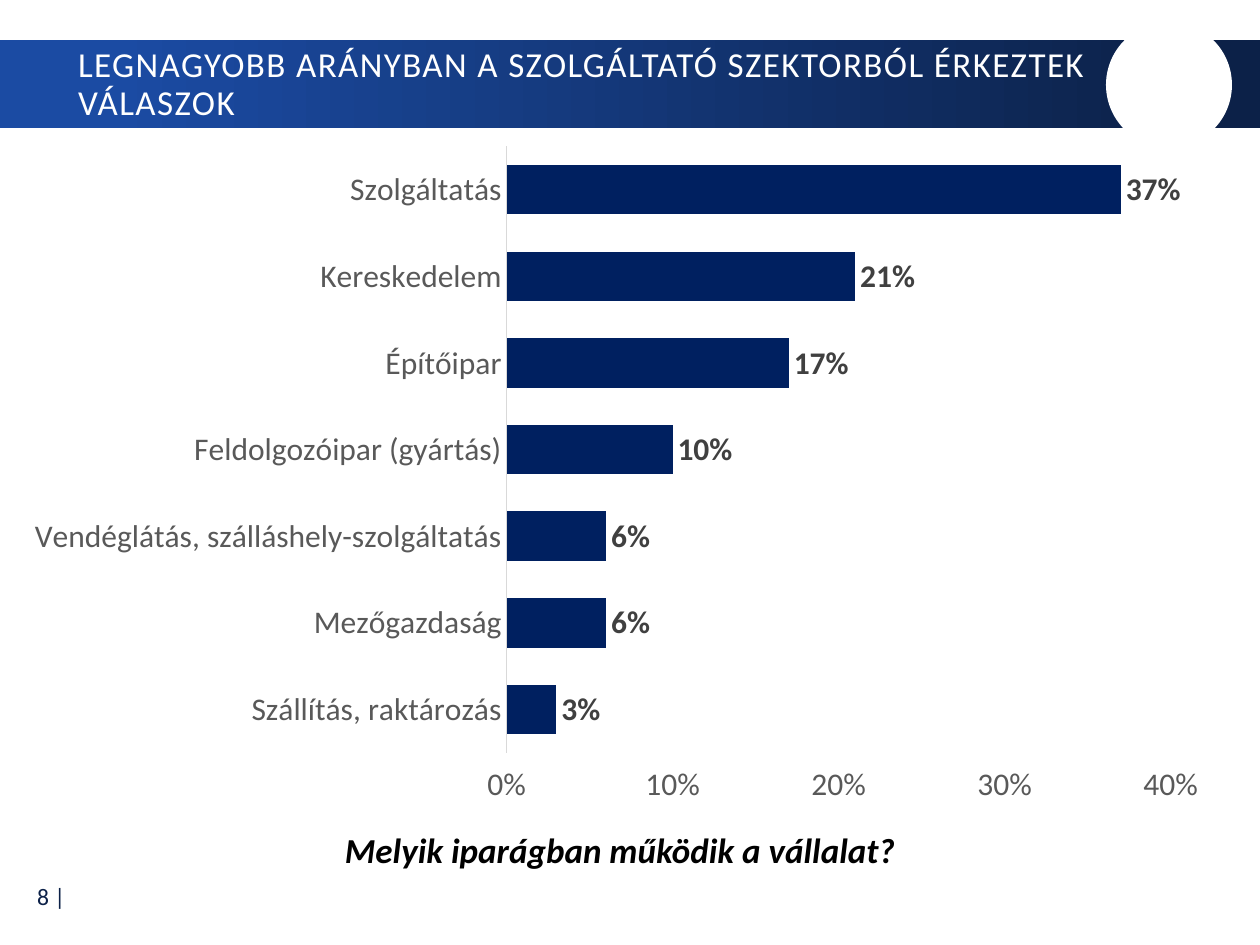
from dataclasses import dataclass

from lxml import etree
from pptx import Presentation
from pptx.chart.data import CategoryChartData
from pptx.dml.color import RGBColor
from pptx.enum.chart import (XL_CHART_TYPE, XL_LABEL_POSITION,
                             XL_TICK_LABEL_POSITION, XL_TICK_MARK)
from pptx.enum.shapes import MSO_SHAPE
from pptx.enum.text import MSO_ANCHOR, PP_ALIGN
from pptx.oxml.ns import qn
from pptx.util import Pt

BAR = XL_CHART_TYPE.BAR_CLUSTERED
OUTSIDE_END = XL_LABEL_POSITION.OUTSIDE_END
HIGH = XL_TICK_LABEL_POSITION.HIGH
NO_TICK = XL_TICK_MARK.NONE
RECTANGLE, OVAL = MSO_SHAPE.RECTANGLE, MSO_SHAPE.OVAL
TOP, MIDDLE = MSO_ANCHOR.TOP, MSO_ANCHOR.MIDDLE
LEFT, RIGHT = PP_ALIGN.LEFT, PP_ALIGN.RIGHT


@dataclass(frozen=True)
class Theme:
    font: str = "Calibri"
    white: str = "FFFFFF"
    black: str = "000000"
    navy: str = "0C2148"
    blue: str = "1B4BA3"
    bar: str = "002060"
    axis_text: str = "595959"
    axis_line: str = "D9D9D9"
    value_text: str = "404040"
    heading_size: float = 20
    chart_size: float = 18
    page_size: float = 13.5


@dataclass(frozen=True)
class Box:
    left: float
    top: float
    width: float
    height: float

    def in_points(self) -> tuple:
        return Pt(self.left), Pt(self.top), Pt(self.width), Pt(self.height)


@dataclass(frozen=True)
class Label:
    text: str
    box: Box
    size: float
    color: str
    emphasis: bool = False
    align: PP_ALIGN = LEFT
    anchor: MSO_ANCHOR = MIDDLE
    line_spacing: float = 1.0
    tracking: int = 0


THEME = Theme()
BAND = Box(0, 23, 720, 50.2)
BADGE = Box(632, 12.5, 72, 72)
CHART = Box(0, 72.7, 720, 397.5)
PLOT = Box(289.5, 11, 379.5, 346.5)

LABELS = [
    Label("8 |", Box(0.7, 498.5, 43.6, 27), THEME.page_size, THEME.navy, align=RIGHT),
    Label("LEGNAGYOBB ARÁNYBAN A SZOLGÁLTATÓ SZEKTORBÓL ÉRKEZTEK VÁLASZOK",
          Box(37.5, 24.5, 599, 48), THEME.heading_size, THEME.white,
          line_spacing=0.9, tracking=80),
    Label("Melyik iparágban működik a vállalat?", Box(190, 470, 340, 31.5),
          THEME.heading_size, THEME.black, emphasis=True, anchor=TOP),
]

SECTOR_SHARES = {
    "Szolgáltatás": 0.37,
    "Kereskedelem": 0.21,
    "Építőipar": 0.17,
    "Feldolgozóipar (gyártás)": 0.1,
    "Vendéglátás, szálláshely-szolgáltatás": 0.06,
    "Mezőgazdaság": 0.06,
    "Szállítás, raktározás": 0.03,
}


def rgb(color: str) -> RGBColor:
    return RGBColor.from_string(color)


def style_font(font, size: float, color: str, bold: bool = False) -> None:
    font.name = THEME.font
    font.size = Pt(size)
    font.bold = bold
    font.color.rgb = rgb(color)


def add_plain_shape(slide, preset: MSO_SHAPE, box: Box):
    shape = slide.shapes.add_shape(preset, *box.in_points())
    shape.shadow.inherit = False
    shape.line.fill.background()
    return shape


def add_header(slide) -> None:
    band = add_plain_shape(slide, RECTANGLE, BAND)
    band.fill.gradient()
    band.fill.gradient_angle = 0
    stops = ((0.09, THEME.blue), (0.95, THEME.navy))
    for stop, (position, color) in zip(band.fill.gradient_stops, stops):
        stop.position = position
        stop.color.rgb = rgb(color)
    badge = add_plain_shape(slide, OVAL, BADGE)
    badge.fill.solid()
    badge.fill.fore_color.rgb = rgb(THEME.white)


def add_label(slide, label: Label) -> None:
    frame = slide.shapes.add_textbox(*label.box.in_points()).text_frame
    frame.word_wrap = True
    frame.vertical_anchor = label.anchor
    frame.text = label.text
    paragraph = frame.paragraphs[0]
    paragraph.alignment = label.align
    paragraph.line_spacing = label.line_spacing
    run = paragraph.runs[0]
    style_font(run.font, label.size, label.color, label.emphasis)
    run.font.italic = label.emphasis
    if label.tracking:
        run.font._element.set("spc", str(label.tracking))


def place_plot(chart) -> None:
    plot_area = chart._chartSpace.find(".//" + qn("c:plotArea"))
    for old_layout in plot_area.findall(qn("c:layout")):
        plot_area.remove(old_layout)
    layout = etree.Element(qn("c:layout"))
    manual = etree.SubElement(layout, qn("c:manualLayout"))
    settings = {
        "layoutTarget": "inner", "xMode": "edge", "yMode": "edge",
        "x": PLOT.left / CHART.width, "y": PLOT.top / CHART.height,
        "w": PLOT.width / CHART.width, "h": PLOT.height / CHART.height,
    }
    for tag, value in settings.items():
        etree.SubElement(manual, qn(f"c:{tag}")).set("val", str(value))
    plot_area.insert(0, layout)


def add_sector_chart(slide) -> None:
    shares = CategoryChartData(number_format="0%")
    shares.categories = list(SECTOR_SHARES)
    shares.add_series("Series 1", list(SECTOR_SHARES.values()))
    chart = slide.shapes.add_chart(BAR, *CHART.in_points(), shares).chart
    chart.has_legend = False
    chart.has_title = False
    style_font(chart.font, THEME.chart_size, THEME.black)
    place_plot(chart)

    sectors, scale = chart.category_axis, chart.value_axis
    for axis in (sectors, scale):
        axis.has_major_gridlines = False
        axis.major_tick_mark = axis.minor_tick_mark = NO_TICK
        style_font(axis.tick_labels.font, THEME.chart_size, THEME.axis_text)
    sectors.reverse_order = True
    sectors.format.line.color.rgb = rgb(THEME.axis_line)
    sectors.format.line.width = Pt(0.75)
    scale.tick_label_position = HIGH
    scale.minimum_scale, scale.maximum_scale, scale.major_unit = 0, 0.4, 0.1
    scale.format.line.fill.background()
    scale.tick_labels.number_format = "0%"
    scale.tick_labels.number_format_is_linked = False

    bars = chart.plots[0]
    bars.gap_width = 75
    bars.vary_by_categories = False
    bar_fill = bars.series[0].format.fill
    bar_fill.solid()
    bar_fill.fore_color.rgb = rgb(THEME.bar)
    values = bars.series[0].data_labels
    values.show_value = True
    values.position = OUTSIDE_END
    values.number_format = "0%"
    values.number_format_is_linked = False
    style_font(values.font, THEME.chart_size, THEME.value_text, bold=True)


def main() -> None:
    deck = Presentation()
    deck.slide_width, deck.slide_height = Pt(720), Pt(540)
    slide = deck.slides.add_slide(deck.slide_layouts[6])
    add_header(slide)
    for label in LABELS:
        add_label(slide, label)
    add_sector_chart(slide)
    deck.save("out.pptx")


if __name__ == "__main__":
    main()
